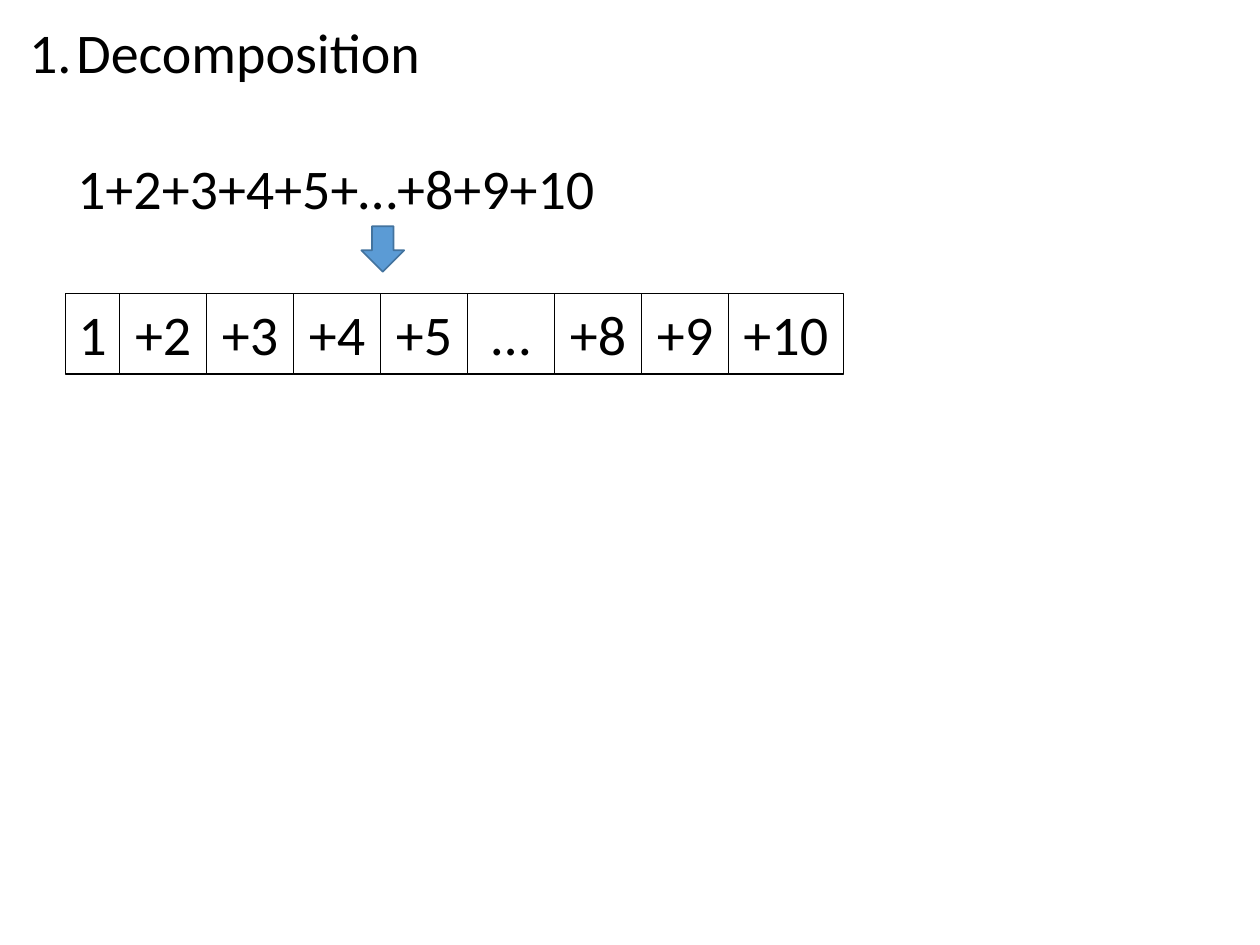
from itertools import accumulate

from lxml.etree import SubElement
from pptx import Presentation
from pptx.dml.color import RGBColor
from pptx.enum.shapes import MSO_SHAPE as Shape
from pptx.enum.text import MSO_ANCHOR as Anchor, MSO_AUTO_SIZE as AutoSize, PP_ALIGN as Align
from pptx.oxml.ns import qn
from pptx.util import Pt

TITLE = ("Decomposition", (9.4, 6.5, 341, 46))
SUM = ("1+2+3+4+5+…+8+9+10", (37, 84, 314, 46))
ARROW = (206.5, 129.3, 24.5, 26)
TERMS = [("1", 31), ("+2", 49.7), ("+3", 49.7), ("+4", 49.7), ("+5", 49.7),
         ("…", 49.7), ("+8", 49.7), ("+9", 49.7), ("+10", 65.6)]
ROW_LEFT, ROW_TOP, ROW_HEIGHT = 37.4, 167.8, 46
HANGING = 27
FRAME = {"word_wrap": False, "auto_size": AutoSize.NONE, "vertical_anchor": Anchor.TOP}
FONT = {"name": "Calibri", "size": Pt(32), "bold": False}


def colour(value):
    return RGBColor.from_string(value)


def set_all(target, values):
    for name, value in values.items():
        setattr(target, name, value)


def place(box, area):
    box.left, box.top, box.width, box.height = map(Pt, area)


def write(box, text, align=Align.LEFT):
    frame = box.text_frame
    set_all(frame, FRAME)
    para = frame.paragraphs[0]
    para.alignment = align
    span = para.add_run()
    span.text = text
    set_all(span.font, FONT)
    span.font.color.rgb = colour("000000")
    return para


def number(para):
    properties = para._p.get_or_add_pPr()
    properties.set("marL", str(Pt(HANGING)))
    properties.set("indent", str(-Pt(HANGING)))
    SubElement(properties, qn("a:buFont"), typeface="+mj-lt")
    SubElement(properties, qn("a:buAutoNum"), type="arabicPeriod")


def add_figure(page, kind, area, line, weight, fill=None):
    box = page.shapes.add_shape(kind, *map(Pt, area))
    box.shadow.inherit = False
    if fill:
        box.fill.solid()
        box.fill.fore_color.rgb = colour(fill)
    else:
        box.fill.background()
    box.line.color.rgb = colour(line)
    box.line.width = Pt(weight)
    return box


def main():
    """Build the slide that splits a sum into its terms."""
    deck = Presentation()
    deck.slide_width, deck.slide_height = Pt(720), Pt(540)
    page = deck.slides.add_slide(deck.slide_layouts[5])

    text, area = TITLE
    place(page.shapes.title, area)
    number(write(page.shapes.title, text))

    text, area = SUM
    write(page.shapes.add_textbox(*map(Pt, area)), text)

    add_figure(page, Shape.DOWN_ARROW, ARROW, "43739E", 1, "5B9BD5")

    lefts = accumulate((width for _, width in TERMS), initial=ROW_LEFT)
    for (term, width), left in zip(TERMS, lefts):
        cell = add_figure(page, Shape.RECTANGLE, (left, ROW_TOP, width, ROW_HEIGHT), "000000", 0.75)
        write(cell, term, Align.CENTER)

    deck.save("out.pptx")


if __name__ == "__main__":
    main()
